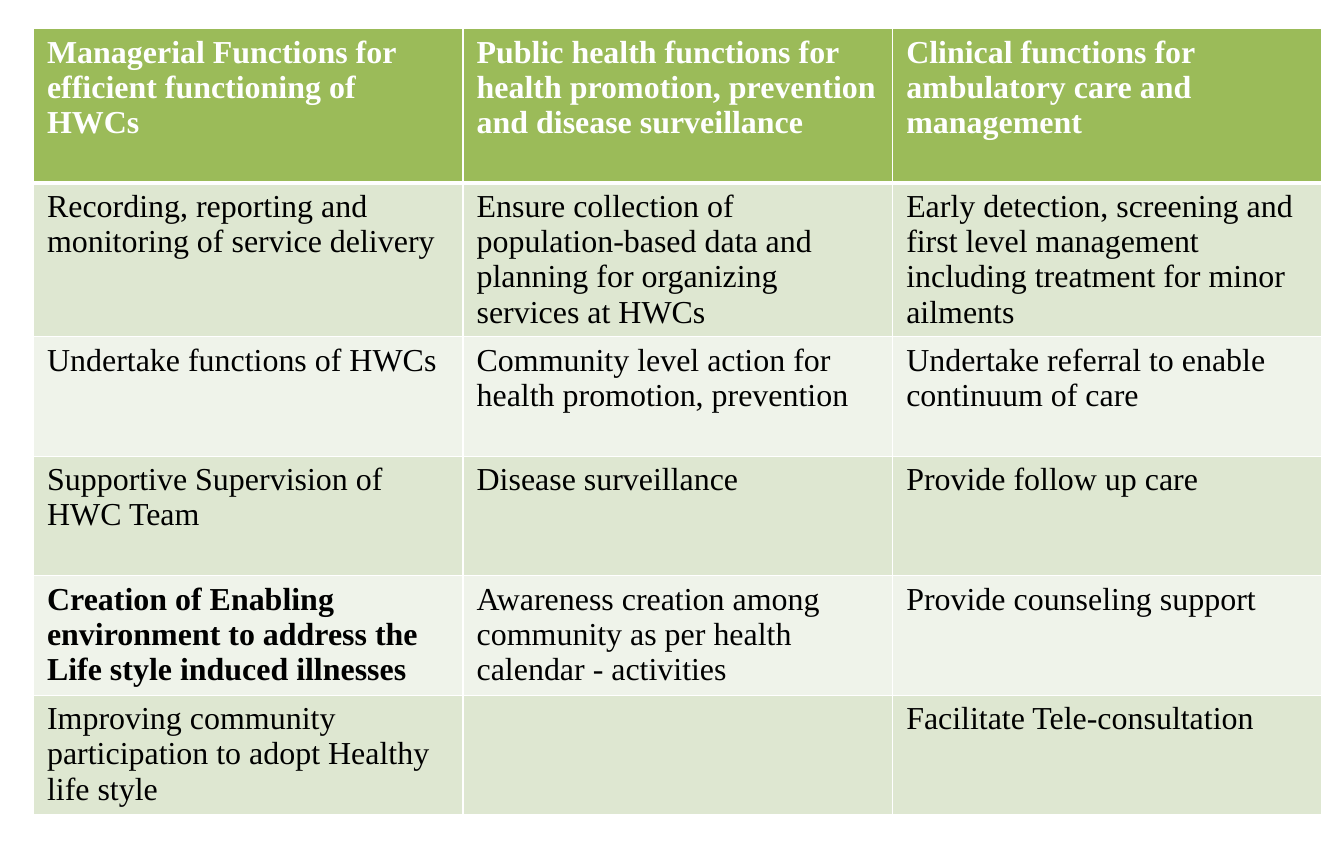
from pptx import Presentation
from pptx.dml.color import RGBColor
from pptx.oxml.ns import qn
from pptx.util import Inches, Pt
from lxml import etree

COLORS = {
    "header": "9BBB59",
    "odd_row": "DEE7D1",
    "even_row": "EFF3EA",
    "header_text": "FFFFFF",
    "body_text": "000000",
    "border": "FFFFFF",
}
HEADINGS = [
    "Managerial Functions for efficient functioning of HWCs",
    "Public health functions for health promotion, prevention and disease surveillance",
    "Clinical functions for ambulatory care and management",
]
DUTIES = [
    ["Recording, reporting and monitoring of service delivery",
     "Ensure collection of population-based data and planning for organizing services at HWCs",
     "Early detection, screening and first level management including treatment for minor ailments"],
    ["Undertake functions of HWCs",
     "Community level action for health promotion, prevention",
     "Undertake referral to enable continuum of care"],
    ["Supportive Supervision of HWC Team",
     "Disease surveillance",
     "Provide follow up care"],
    ["Creation of Enabling environment to address the Life style induced illnesses",
     "Awareness creation among community as per health calendar - activities",
     "Provide counseling support"],
    ["Improving community participation to adopt Healthy life style",
     "",
     "Facilitate Tele-consultation"],
]
EMPHASIZED = (4, 0)
COLUMN_WIDTH = 3.74
ROW_HEIGHTS = [1.34, 1.34, 1.04, 1.04, 1.04, 1.04]


class SlideBuilder:
    def __init__(self, slide):
        self.slide = slide
        self.font = "Times New Roman"
        self.size = Pt(20)

    def add_grid(self, left, top, rows, column_width, row_heights, emphasized):
        """Add a table whose first row is a header and whose other rows are banded."""
        columns = len(rows[0])
        grid = self.slide.shapes.add_table(
            len(rows), columns, Inches(left), Inches(top),
            Inches(column_width * columns), Inches(sum(row_heights))).table
        for column in grid.columns:
            column.width = Inches(column_width)
        for row, height in zip(grid.rows, row_heights):
            row.height = Inches(height)
        for r, texts in enumerate(rows):
            band = "header" if r == 0 else "odd_row" if r % 2 else "even_row"
            for c, text in enumerate(texts):
                cell = grid.cell(r, c)
                self.set_borders(cell, top=3 if r == 1 else 1, bottom=3 if r == 0 else 1)
                cell.fill.solid()
                cell.fill.fore_color.rgb = RGBColor.from_string(COLORS[band])
                cell.margin_left = cell.margin_right = Inches(0.12)
                cell.margin_top = cell.margin_bottom = Inches(0.05)
                if text:
                    self.add_text(cell, text, "header_text" if r == 0 else "body_text",
                                  r == 0 or (r, c) == emphasized)

    def set_borders(self, cell, top, bottom):
        properties = cell._tc.get_or_add_tcPr()
        for side, width in (("L", 1), ("R", 1), ("T", top), ("B", bottom)):
            line = etree.SubElement(properties, qn(f"a:ln{side}"), w=str(Pt(width)))
            fill = etree.SubElement(line, qn("a:solidFill"))
            etree.SubElement(fill, qn("a:srgbClr"), val=COLORS["border"])

    def add_text(self, cell, text, color, bold):
        run = cell.text_frame.paragraphs[0].add_run()
        run.text = text
        run.font.name = self.font
        run.font.size = self.size
        run.font.bold = bold
        run.font.color.rgb = RGBColor.from_string(COLORS[color])


def main():
    deck = Presentation()
    deck.slide_width = Inches(11.7)
    deck.slide_height = Inches(7.5)
    builder = SlideBuilder(deck.slides.add_slide(deck.slide_layouts[6]))
    builder.add_grid(0.29, 0.25, [HEADINGS, *DUTIES], COLUMN_WIDTH, ROW_HEIGHTS, EMPHASIZED)
    deck.save("out.pptx")


if __name__ == "__main__":
    main()
